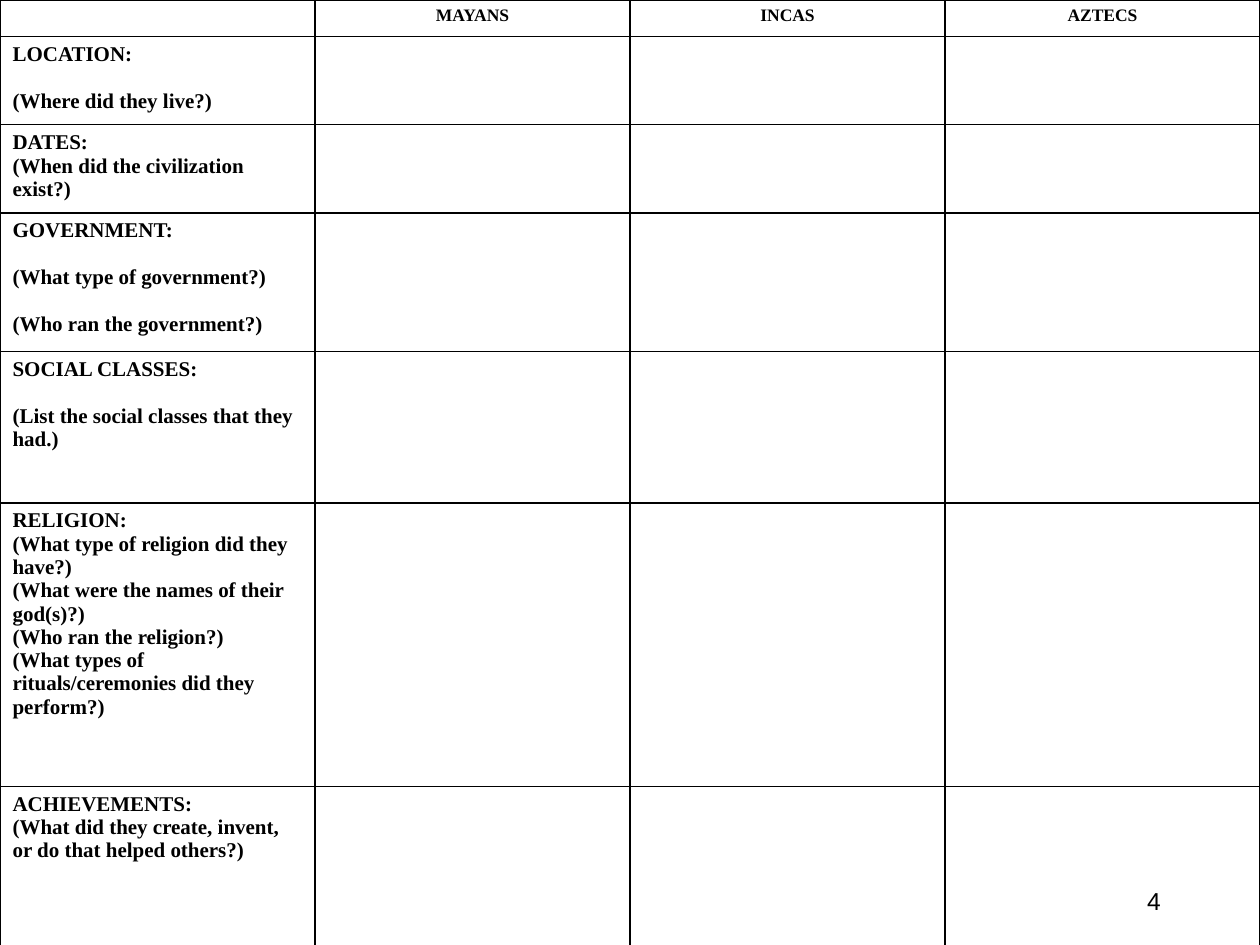
from lxml import etree
from pptx import Presentation
from pptx.dml.color import RGBColor
from pptx.enum.text import MSO_ANCHOR, PP_ALIGN
from pptx.oxml.ns import qn
from pptx.util import Inches, Pt

LEFT, CENTER, RIGHT = PP_ALIGN.LEFT, PP_ALIGN.CENTER, PP_ALIGN.RIGHT
MIDDLE = MSO_ANCHOR.MIDDLE
BLANK_LAYOUT = 6
LINE_GAP = 13.3

CIVILIZATIONS = ["MAYANS", "INCAS", "AZTECS"]
TOPICS = [
    ("LOCATION:", ["(Where did they live?)"], LINE_GAP, 0.7),
    ("DATES:", ["(When did the civilization exist?)"], 0, 0.7),
    ("GOVERNMENT:",
     ["(What type of government?)", "(Who ran the government?)"], LINE_GAP, 1.1),
    ("SOCIAL CLASSES:", ["(List the social classes that they had.)"], LINE_GAP, 1.2),
    ("RELIGION:",
     ["(What type of religion did they have?)",
      "(What were the names of their god(s)?)",
      "(Who ran the religion?)",
      "(What types of rituals/ceremonies did they perform?)"], 0, 2.25),
    ("ACHIEVEMENTS:",
     ["(What did they create, invent, or do that helped others?)"], 0, 1.38),
]
HEADER_HEIGHT = 0.29
COLUMN_WIDTH = 2.5


def color(value):
    """Turn a hex string into a colour."""
    return RGBColor.from_string(value)


def write_text(frame, lines, *, font, size, fill, bold=False, align=LEFT, gap=0):
    """Write one paragraph per line with a shared format."""
    frame.word_wrap = True
    for index, line in enumerate(lines):
        paragraph = frame.add_paragraph() if index else frame.paragraphs[0]
        paragraph.alignment = align
        if index:
            paragraph.space_before = Pt(gap)
        run = paragraph.add_run()
        run.text = line
        run.font.name = font
        run.font.size = Pt(size)
        run.font.bold = bold
        run.font.color.rgb = color(fill)


class Worksheet:
    """Hold the style and the current slide."""

    ink = "000000"
    table_font = "Times New Roman"
    number_font = "Arial"
    border_width = 1

    def __init__(self, slide):
        """Keep the slide to draw on."""
        self.slide = slide

    def add_number(self, text, left, top, width, height):
        """Add the page number."""
        box = self.slide.shapes.add_textbox(
            Inches(left), Inches(top), Inches(width), Inches(height))
        box.text_frame.vertical_anchor = MIDDLE
        write_text(box.text_frame, [text], font=self.number_font, size=14,
                   fill=self.ink, align=RIGHT)

    def format_cell(self, cell):
        """Give a cell thin borders, no fill and a small empty line."""
        properties = cell._tc.get_or_add_tcPr()
        for side in ("a:lnL", "a:lnR", "a:lnT", "a:lnB"):
            line = etree.SubElement(properties, qn(side), w=str(Pt(self.border_width)))
            solid = etree.SubElement(line, qn("a:solidFill"))
            etree.SubElement(solid, qn("a:srgbClr"), val=self.ink)
        cell.fill.background()
        if not cell.text:
            paragraph = cell.text_frame.paragraphs[0]
            etree.SubElement(paragraph._p, qn("a:endParaRPr"), sz="1000")

    def add_table(self, civilizations, topics):
        """Add the comparison table with a row for each topic."""
        heights = [HEADER_HEIGHT] + [topic[-1] for topic in topics]
        columns = len(civilizations) + 1
        frame = self.slide.shapes.add_table(
            len(heights), columns, 0, 0,
            Inches(COLUMN_WIDTH * columns), Inches(sum(heights)))
        table = frame.table
        table.first_row = table.horz_banding = False
        for column in table.columns:
            column.width = Inches(COLUMN_WIDTH)
        for row, height in zip(table.rows, heights):
            row.height = Inches(height)
        for index, name in enumerate(civilizations, 1):
            write_text(table.cell(0, index).text_frame, [name], font=self.table_font,
                       size=10, fill=self.ink, bold=True, align=CENTER)
        for index, (heading, questions, gap, _) in enumerate(topics, 1):
            write_text(table.cell(index, 0).text_frame, [heading, *questions],
                       font=self.table_font, size=12, fill=self.ink, bold=True, gap=gap)
        for cell in table.iter_cells():
            self.format_cell(cell)


def main():
    """Build the worksheet slide and save it."""
    presentation = Presentation()
    presentation.slide_width = Inches(10)
    presentation.slide_height = Inches(7.5)
    slide = presentation.slides.add_slide(presentation.slide_layouts[BLANK_LAYOUT])
    worksheet = Worksheet(slide)
    worksheet.add_number("4", 7.06, 6.95, 2.25, 0.4)
    worksheet.add_table(CIVILIZATIONS, TOPICS)
    presentation.save("out.pptx")


if __name__ == "__main__":
    main()
